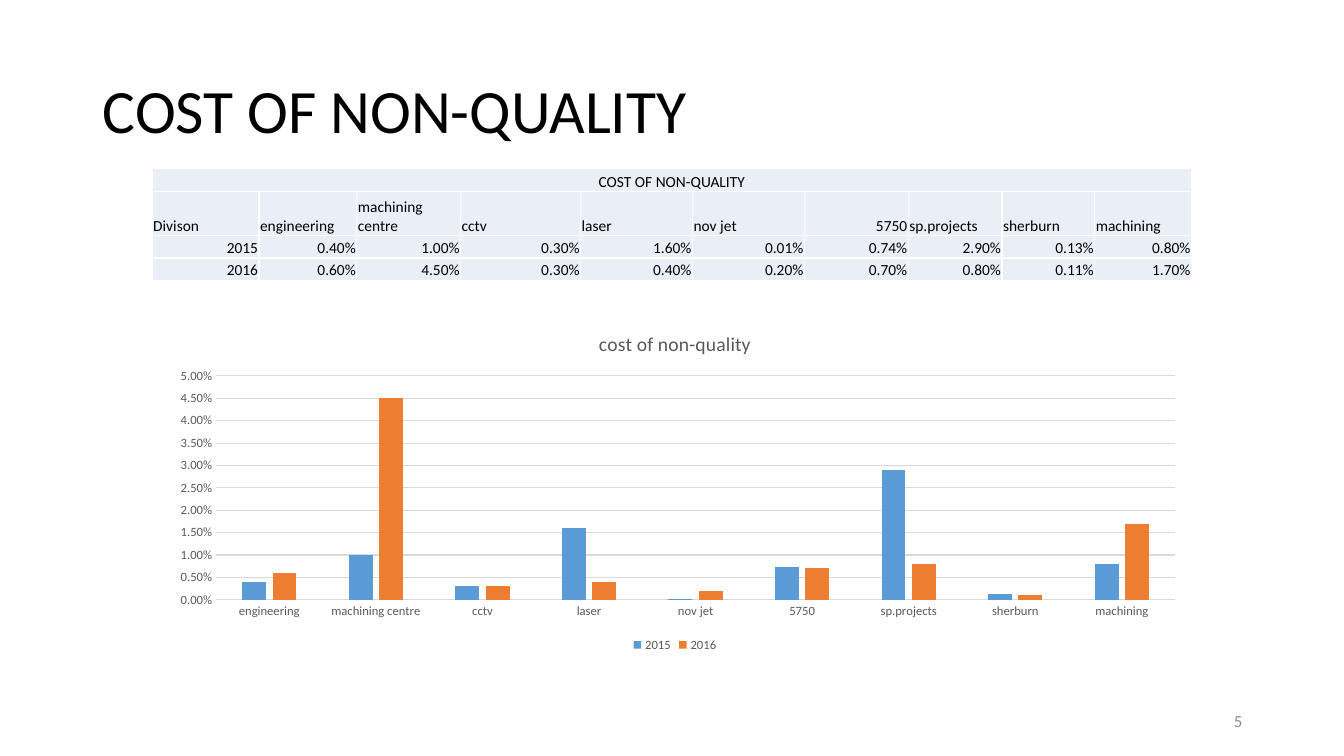
from dataclasses import dataclass

from lxml.etree import SubElement
from pptx import Presentation
from pptx.chart.chart import Chart
from pptx.chart.data import CategoryChartData
from pptx.dml.color import RGBColor
from pptx.enum.chart import XL_CHART_TYPE, XL_LEGEND_POSITION, XL_TICK_MARK
from pptx.enum.text import MSO_ANCHOR, PP_ALIGN
from pptx.oxml import parse_xml
from pptx.oxml.ns import nsdecls, qn
from pptx.slide import Slide
from pptx.table import _Cell
from pptx.text.text import Font
from pptx.util import Inches, Pt

FONT = "Calibri"
COLORS = {
    "text": "000000",
    "chart_text": "595959",
    "page_number": "8C8C8C",
    "grid": "D9D9D9",
    "cell": "EAEFF7",
    "border": "FFFFFF",
}
HEADING = "COST OF NON-QUALITY"


@dataclass
class Year:
    name: str
    color: str
    costs: list[float]


DIVISIONS = ["engineering", "machining centre", "cctv", "laser", "nov jet",
             "5750", "sp.projects", "sherburn", "machining"]
YEARS = [
    Year("2015", "5B9BD5",
         [0.004, 0.01, 0.003, 0.016, 0.0001, 0.0074, 0.029, 0.0013, 0.008]),
    Year("2016", "ED7D31",
         [0.006, 0.045, 0.003, 0.004, 0.002, 0.007, 0.008, 0.0011, 0.017]),
]
COLUMN_WIDTHS = [1.06, 0.97, 1.03, 1.19, 1.11, 1.11, 1.03, 0.93, 0.92, 0.96]
ROW_HEIGHTS = [0.23, 0.44, 0.22, 0.22]


def rgb(name: str) -> RGBColor:
    return RGBColor.from_string(COLORS[name])


def style_font(font: Font, size: float, color: str) -> None:
    font.name = FONT
    font.size = Pt(size)
    font.bold = False
    font.color.rgb = rgb(color)


def add_title(slide: Slide) -> None:
    title = slide.shapes.title
    title.left, title.top = Inches(0.92), Inches(0.4)
    title.width, title.height = Inches(11.5), Inches(1.45)
    tf = title.text_frame
    tf.text = HEADING
    tf.vertical_anchor = MSO_ANCHOR.MIDDLE
    p = tf.paragraphs[0]
    p.alignment = PP_ALIGN.LEFT
    p.line_spacing = 0.9
    style_font(p.font, 44, "text")


def add_borders(cell: _Cell) -> None:
    tc_pr = cell._tc.get_or_add_tcPr()
    for i, side in enumerate(("lnL", "lnR", "lnT", "lnB")):
        tc_pr.insert(i, parse_xml(
            f'<a:{side} {nsdecls("a")} w="12700"><a:solidFill>'
            f'<a:srgbClr val="{COLORS["border"]}"/></a:solidFill></a:{side}>'))


def fill_cell(cell: _Cell, text: str, alignment: PP_ALIGN) -> None:
    cell.text = text
    cell.vertical_anchor = MSO_ANCHOR.BOTTOM
    cell.margin_left = cell.margin_right = cell.margin_top = Inches(0.01)
    cell.margin_bottom = 0
    p = cell.text_frame.paragraphs[0]
    p.alignment = alignment
    style_font(p.font, 11, "text")
    cell.fill.solid()
    cell.fill.fore_color.rgb = rgb("cell")
    add_borders(cell)


def add_cost_table(slide: Slide) -> None:
    rows = [[HEADING] + [""] * len(DIVISIONS), ["Divison", *DIVISIONS]]
    rows += [[y.name, *(f"{cost:.2%}" for cost in y.costs)] for y in YEARS]
    table = slide.shapes.add_table(
        len(rows), len(COLUMN_WIDTHS), Inches(1.51), Inches(1.67),
        Inches(sum(COLUMN_WIDTHS)), Inches(sum(ROW_HEIGHTS))).table
    table.first_row = table.horz_banding = False
    for column, width in zip(table.columns, COLUMN_WIDTHS):
        column.width = Inches(width)
    for row, height, texts in zip(table.rows, ROW_HEIGHTS, rows):
        row.height = Inches(height)
        for cell, text in zip(row.cells, texts):
            numeric = text[:1].isdigit()
            fill_cell(cell, text, PP_ALIGN.RIGHT if numeric else PP_ALIGN.LEFT)
    heading = table.cell(0, 0)
    heading.merge(table.cell(0, len(DIVISIONS)))
    heading.text_frame.paragraphs[0].alignment = PP_ALIGN.CENTER


def place_plot(chart: Chart, x: float, y: float, w: float, h: float) -> None:
    """Fix the inner plot area, in fractions of the chart."""
    plot_area = chart._chartSpace.chart.plotArea
    for old in plot_area.findall(qn("c:layout")):
        plot_area.remove(old)
    layout = parse_xml(f'<c:layout {nsdecls("c")}><c:manualLayout/></c:layout>')
    settings = {"layoutTarget": "inner", "xMode": "edge", "yMode": "edge",
                "x": x, "y": y, "w": w, "h": h}
    for tag, value in settings.items():
        SubElement(layout[0], qn(f"c:{tag}")).set("val", str(value))
    plot_area.insert(0, layout)


def add_cost_chart(slide: Slide) -> None:
    data = CategoryChartData(number_format="0.00%")
    data.categories = DIVISIONS
    for year in YEARS:
        data.add_series(year.name, year.costs)
    chart = slide.shapes.add_chart(
        XL_CHART_TYPE.COLUMN_CLUSTERED, Inches(1.58), Inches(3.12),
        Inches(10.23), Inches(3.39), data).chart
    style_font(chart.font, 10, "text")

    tf = chart.chart_title.text_frame
    tf.text = "cost of non-quality"
    style_font(tf.paragraphs[0].font, 14, "chart_text")
    chart.chart_title.include_in_layout = False

    chart.has_legend = True
    chart.legend.position = XL_LEGEND_POSITION.BOTTOM
    chart.legend.include_in_layout = False
    style_font(chart.legend.font, 9, "chart_text")

    costs, divisions = chart.value_axis, chart.category_axis
    for axis in (costs, divisions):
        axis.major_tick_mark = axis.minor_tick_mark = XL_TICK_MARK.NONE
        style_font(axis.tick_labels.font, 9, "chart_text")
    costs.minimum_scale, costs.maximum_scale = 0, 0.05
    costs.major_unit = 0.005
    costs.tick_labels.number_format = "0.00%"
    costs.tick_labels.number_format_is_linked = False
    costs.format.line.fill.background()
    for line in (costs.major_gridlines.format.line, divisions.format.line):
        line.width = Pt(0.75)
        line.color.rgb = rgb("grid")

    plot = chart.plots[0]
    plot.vary_by_categories = False
    plot.gap_width, plot.overlap = 219, -27
    for series, year in zip(plot.series, YEARS):
        series.format.fill.solid()
        series.format.fill.fore_color.rgb = RGBColor.from_string(year.color)
    place_plot(chart, 0.055, 0.18, 0.93, 0.655)


def add_page_number(slide: Slide) -> None:
    tf = slide.shapes.add_textbox(
        Inches(9.42), Inches(6.95), Inches(3), Inches(0.4)).text_frame
    tf.word_wrap = True
    tf.vertical_anchor = MSO_ANCHOR.MIDDLE
    p = tf.paragraphs[0]
    p.alignment = PP_ALIGN.RIGHT
    r = p.add_run()
    r.text = "5"
    style_font(r.font, 12, "page_number")


def main() -> None:
    prs = Presentation()
    prs.slide_width, prs.slide_height = Inches(13.33), Inches(7.5)
    slide = prs.slides.add_slide(prs.slide_layouts[5])
    add_title(slide)
    add_cost_table(slide)
    add_page_number(slide)
    add_cost_chart(slide)
    prs.save("out.pptx")


if __name__ == "__main__":
    main()
